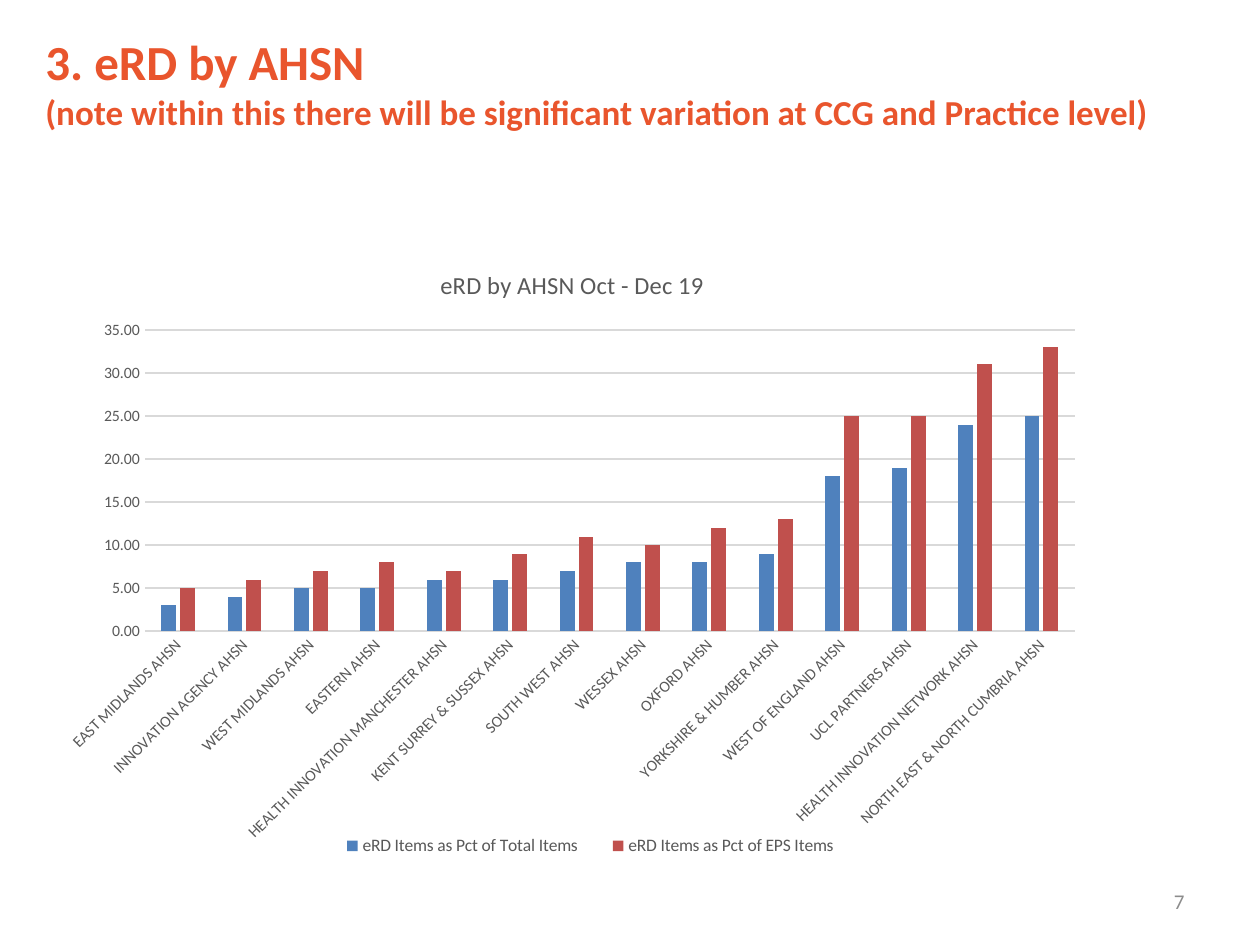
"""Build the slide showing eRD by AHSN as a clustered column chart."""
from lxml import etree
from pptx import Presentation
from pptx.chart.data import CategoryChartData
from pptx.dml.color import RGBColor
from pptx.enum import chart as ch, text
from pptx.oxml.ns import qn
from pptx.util import Inches, Pt

ORANGE = RGBColor(0xE9, 0x55, 0x2D)
BLUE = RGBColor(0x4F, 0x81, 0xBD)
RED = RGBColor(0xC0, 0x50, 0x4D)
DARK_GREY = RGBColor(0x59, 0x59, 0x59)
PAGE_GREY = RGBColor(0x8C, 0x8C, 0x8C)
RULE_GREY = RGBColor(0xD9, 0xD9, 0xD9)
CHART_WIDTH, CHART_HEIGHT = Inches(8.32), Inches(5.16)


def set_font(font, size, color, bold=False):
    font.name = "Calibri"
    font.size = Pt(size)
    font.bold = bold
    font.color.rgb = color


def place(element, index, left, top, width=None, height=None, target=None):
    for old in element.findall(qn("c:layout")):
        element.remove(old)
    layout = etree.Element(qn("c:layout"))
    element.insert(index, layout)
    manual = etree.SubElement(layout, qn("c:manualLayout"))
    settings = {"layoutTarget": target, "xMode": "edge", "yMode": "edge",
                "x": left / CHART_WIDTH, "y": top / CHART_HEIGHT,
                "w": width and width / CHART_WIDTH,
                "h": height and height / CHART_HEIGHT}
    for tag, value in settings.items():
        if value is not None:
            etree.SubElement(manual, qn(f"c:{tag}")).set("val", str(value))


prs = Presentation()
prs.slide_width, prs.slide_height = Inches(10), Inches(7.5)
slide = prs.slides.add_slide(prs.slide_layouts[5])

heading = slide.shapes.title
heading.left, heading.top = Inches(0.26), Inches(0.2)
heading.width, heading.height = Inches(9.42), Inches(0.91)
heading.text_frame.text = (
    "3. eRD by AHSN\n"
    "(note within this there will be significant variation at CCG and Practice level)"
)
heading.text_frame.vertical_anchor = text.MSO_ANCHOR.TOP
heading.text_frame.auto_size = text.MSO_AUTO_SIZE.NONE
for line, size in zip(heading.text_frame.paragraphs, (28, 20)):
    line.alignment = text.PP_ALIGN.LEFT
    set_font(line.runs[0].font, size, ORANGE, bold=True)

rates = [
    ("EAST MIDLANDS AHSN", 3, 5),
    ("INNOVATION AGENCY AHSN", 4, 6),
    ("WEST MIDLANDS AHSN", 5, 7),
    ("EASTERN AHSN", 5, 8),
    ("HEALTH INNOVATION MANCHESTER AHSN", 6, 7),
    ("KENT SURREY & SUSSEX AHSN", 6, 9),
    ("SOUTH WEST AHSN", 7, 11),
    ("WESSEX AHSN", 8, 10),
    ("OXFORD AHSN", 8, 12),
    ("YORKSHIRE & HUMBER AHSN", 9, 13),
    ("WEST OF ENGLAND AHSN", 18, 25),
    ("UCL PARTNERS AHSN", 19, 25),
    ("HEALTH INNOVATION NETWORK AHSN", 24, 31),
    ("NORTH EAST & NORTH CUMBRIA AHSN", 25, 33),
]
regions, total_pct, eps_pct = zip(*rates)
erd_data = CategoryChartData(number_format="0.00")
erd_data.categories = regions
erd_data.add_series("eRD Items as Pct of Total Items", total_pct)
erd_data.add_series("eRD Items as Pct of EPS Items", eps_pct)

erd_chart = slide.shapes.add_chart(
    ch.XL_CHART_TYPE.COLUMN_CLUSTERED,
    Inches(0.38), Inches(1.94), CHART_WIDTH, CHART_HEIGHT, erd_data,
).chart
set_font(erd_chart.font, 10, DARK_GREY)

erd_chart.has_title = True
chart_title = erd_chart.chart_title
chart_title.text_frame.text = "eRD by AHSN Oct - Dec 19"
set_font(chart_title.text_frame.paragraphs[0].runs[0].font, 14, DARK_GREY)
chart_title.include_in_layout = False

erd_chart.has_legend = True
legend = erd_chart.legend
legend.position = ch.XL_LEGEND_POSITION.BOTTOM
legend.include_in_layout = False
set_font(legend.font, 10, DARK_GREY)

columns = erd_chart.plots[0]
columns.gap_width, columns.overlap = 219, -27
columns.vary_by_categories = False
for series, color in zip(columns.series, (BLUE, RED)):
    series.format.fill.solid()
    series.format.fill.fore_color.rgb = color

region_axis, pct_axis = erd_chart.category_axis, erd_chart.value_axis
for axis in (region_axis, pct_axis):
    axis.major_tick_mark = axis.minor_tick_mark = ch.XL_TICK_MARK.NONE
    set_font(axis.tick_labels.font, 9, DARK_GREY)
region_axis._element.find(qn("c:txPr")).find(qn("a:bodyPr")).set("rot", "-2700000")
pct_axis.minimum_scale, pct_axis.maximum_scale, pct_axis.major_unit = 0, 35, 5
pct_axis.tick_labels.number_format = "0.00"
pct_axis.tick_labels.number_format_is_linked = False
pct_axis.format.line.fill.background()
for rule in (region_axis.format.line, pct_axis.major_gridlines.format.line):
    rule.color.rgb = RULE_GREY
    rule.width = Pt(0.75)

plot_area = erd_chart._chartSpace.chart.plotArea
place(plot_area, 0, Inches(0.77), Inches(0.68), Inches(7.38), Inches(2.39), "inner")
place(chart_title._element, 1, Inches(3.08), Inches(0.15))
place(legend._element, 1, Inches(2.14), Inches(4.65), Inches(4.33), Inches(0.25))

page_number = slide.shapes.add_textbox(
    Inches(7.17), Inches(6.95), Inches(2.33), Inches(0.4)
).text_frame
page_number.word_wrap = True
page_number.vertical_anchor = text.MSO_ANCHOR.MIDDLE
page_number.text = "7"
page_number.paragraphs[0].alignment = text.PP_ALIGN.RIGHT
set_font(page_number.paragraphs[0].runs[0].font, 12, PAGE_GREY)

prs.save("out.pptx")
